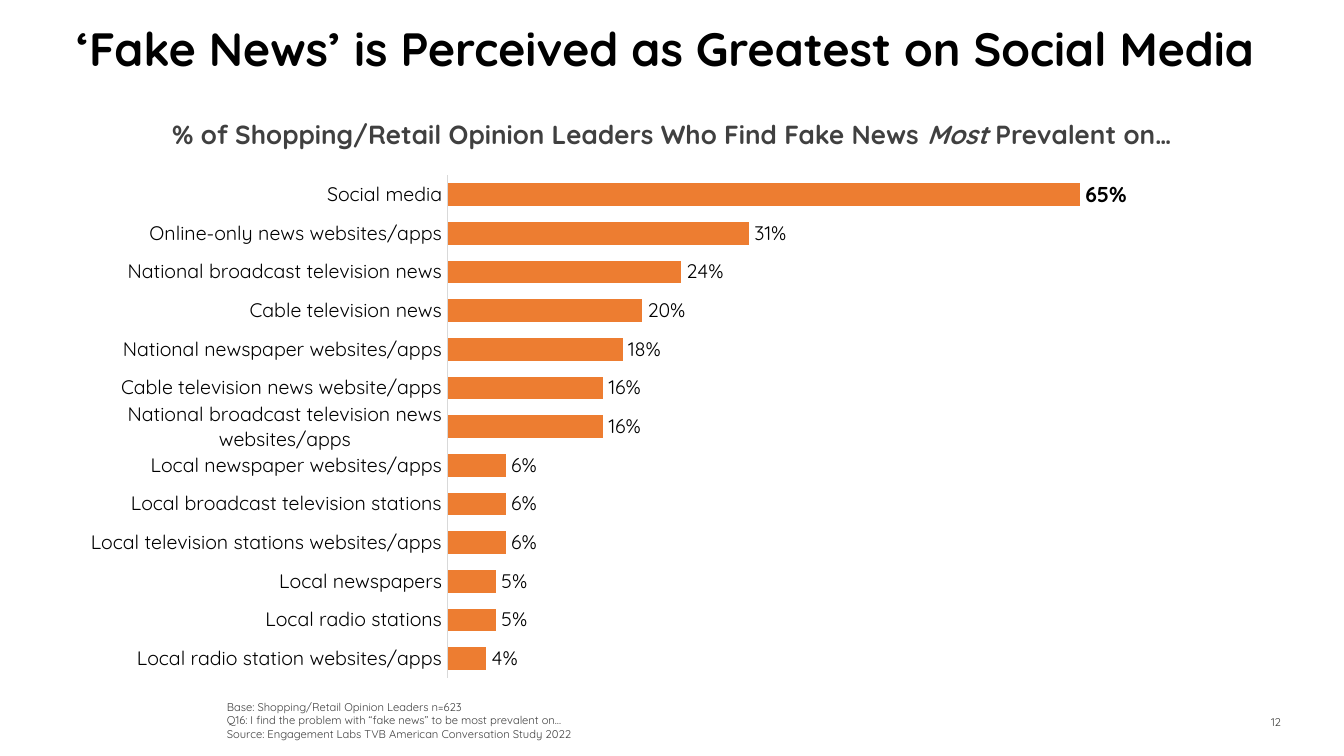
"""Build a slide with a bar chart of where fake news is seen as most prevalent."""
from dataclasses import dataclass

from lxml.etree import SubElement
from pptx import Presentation
from pptx.chart.data import CategoryChartData
from pptx.dml.color import RGBColor
from pptx.enum.chart import XL_CHART_TYPE, XL_LABEL_POSITION, XL_TICK_MARK
from pptx.enum.text import MSO_ANCHOR, PP_ALIGN
from pptx.oxml.ns import qn
from pptx.util import Pt


@dataclass(frozen=True)
class Theme:
    font: str = "Quicksand"
    black: str = "000000"
    grey: str = "404040"
    number: str = "3C3C3A"
    axis: str = "D9D9D9"
    bar: str = "ED7D31"
    title: float = 25
    subtitle: float = 14
    label: float = 10.5
    highlight: float = 11.5
    note: float = 6


theme = Theme()


def style(font, size, color, bold=False):
    font.name = theme.font
    font.size = Pt(size)
    font.bold = bold
    font.color.rgb = RGBColor.from_string(color)


def add_text(box, lines, size, color, bold=False, align=PP_ALIGN.LEFT,
             anchor=MSO_ANCHOR.TOP, top_inset=3.6, wrap=True):
    tf = s.shapes.add_textbox(*map(Pt, box)).text_frame
    tf.word_wrap = wrap
    tf.vertical_anchor = anchor
    tf.margin_top = Pt(top_inset)
    tf.text = "\n".join(lines)
    for p in tf.paragraphs:
        p.alignment = align
        for r in p.runs:
            style(r.font, size, color, bold)
    return tf


prs = Presentation()
prs.slide_width, prs.slide_height = Pt(720), Pt(405)
s = prs.slides.add_slide(prs.slide_layouts[6])

sources = [
    ("Social media", 0.65),
    ("Online-only news websites/apps", 0.31),
    ("National broadcast television news", 0.24),
    ("Cable television news", 0.20),
    ("National newspaper websites/apps", 0.18),
    ("Cable television news website/apps", 0.16),
    ("National broadcast television news websites/apps", 0.16),
    ("Local newspaper websites/apps", 0.06),
    ("Local broadcast television stations", 0.06),
    ("Local television stations websites/apps", 0.06),
    ("Local newspapers", 0.05),
    ("Local radio stations", 0.05),
    ("Local radio station websites/apps", 0.04),
]
data = CategoryChartData(number_format="#,##0%")
data.categories = [name for name, share in sources]
data.add_series("Series 1", [share for name, share in sources])
chart = s.shapes.add_chart(XL_CHART_TYPE.BAR_CLUSTERED, Pt(36.7), Pt(83.5),
                           Pt(653), Pt(290.2), data).chart
chart.has_legend = False
chart.has_title = False
style(chart.font, theme.label, theme.black)

cat_axis = chart.category_axis
cat_axis.reverse_order = True
cat_axis.major_tick_mark = XL_TICK_MARK.NONE
cat_axis.format.line.color.rgb = RGBColor.from_string(theme.axis)
cat_axis.format.line.width = Pt(0.75)
style(cat_axis.tick_labels.font, theme.label, theme.black)

val_axis = chart.value_axis
val_axis.visible = False
val_axis.has_major_gridlines = False
val_axis.minimum_scale, val_axis.maximum_scale = 0, 0.7

plot = chart.plots[0]
plot.gap_width = 70
plot.vary_by_categories = False
series = plot.series[0]
series.format.fill.solid()
series.format.fill.fore_color.rgb = RGBColor.from_string(theme.bar)

labels = series.data_labels
labels.show_value = True
labels.number_format = "#,##0%"
labels.number_format_is_linked = False
labels.position = XL_LABEL_POSITION.OUTSIDE_END
style(labels.font, theme.label, theme.black)
top_label = series.points[0].data_label
style(top_label.font, theme.highlight, theme.black, bold=True)
top_label.position = XL_LABEL_POSITION.OUTSIDE_END

plot_area = plot._element.getparent()
for old in plot_area.findall(qn("c:layout")):
    plot_area.remove(old)
layout = SubElement(plot_area, qn("c:layout"))
plot_area.insert(0, layout)
manual = SubElement(layout, qn("c:manualLayout"))
for tag, value in [("layoutTarget", "inner"), ("xMode", "edge"), ("yMode", "edge"),
                   ("x", "0.311"), ("y", "0.036"), ("w", "0.559"), ("h", "0.928")]:
    SubElement(manual, qn(f"c:{tag}")).set("val", value)

add_text((33.8, 10.8, 661.7, 49),
         ["‘Fake News’ is Perceived as Greatest on Social Media"],
         theme.title, theme.black, bold=True, top_inset=0)

subtitle = add_text((83.5, 59.8, 553, 24.5),
                    ["% of Shopping/Retail Opinion Leaders Who Find Fake News "],
                    theme.subtitle, theme.grey, bold=True,
                    align=PP_ALIGN.CENTER, wrap=False)
for text, italic in [("Most", True), (" Prevalent on…", False)]:
    r = subtitle.paragraphs[0].add_run()
    r.text = text
    style(r.font, theme.subtitle, theme.grey, bold=True)
    r.font.italic = italic

add_text((114.5, 371.5, 542.2, 28.8),
         ["Base: Shopping/Retail Opinion Leaders n=623",
          "Q16: I find the problem with “fake news” to be most prevalent on…",
          "Source: Engagement Labs TVB American Conversation Study 2022"],
         theme.note, theme.grey, anchor=MSO_ANCHOR.BOTTOM)

add_text((650.9, 375.8, 42.5, 21.6), ["12"], theme.note, theme.number,
         align=PP_ALIGN.RIGHT, anchor=MSO_ANCHOR.MIDDLE)

prs.save("out.pptx")
